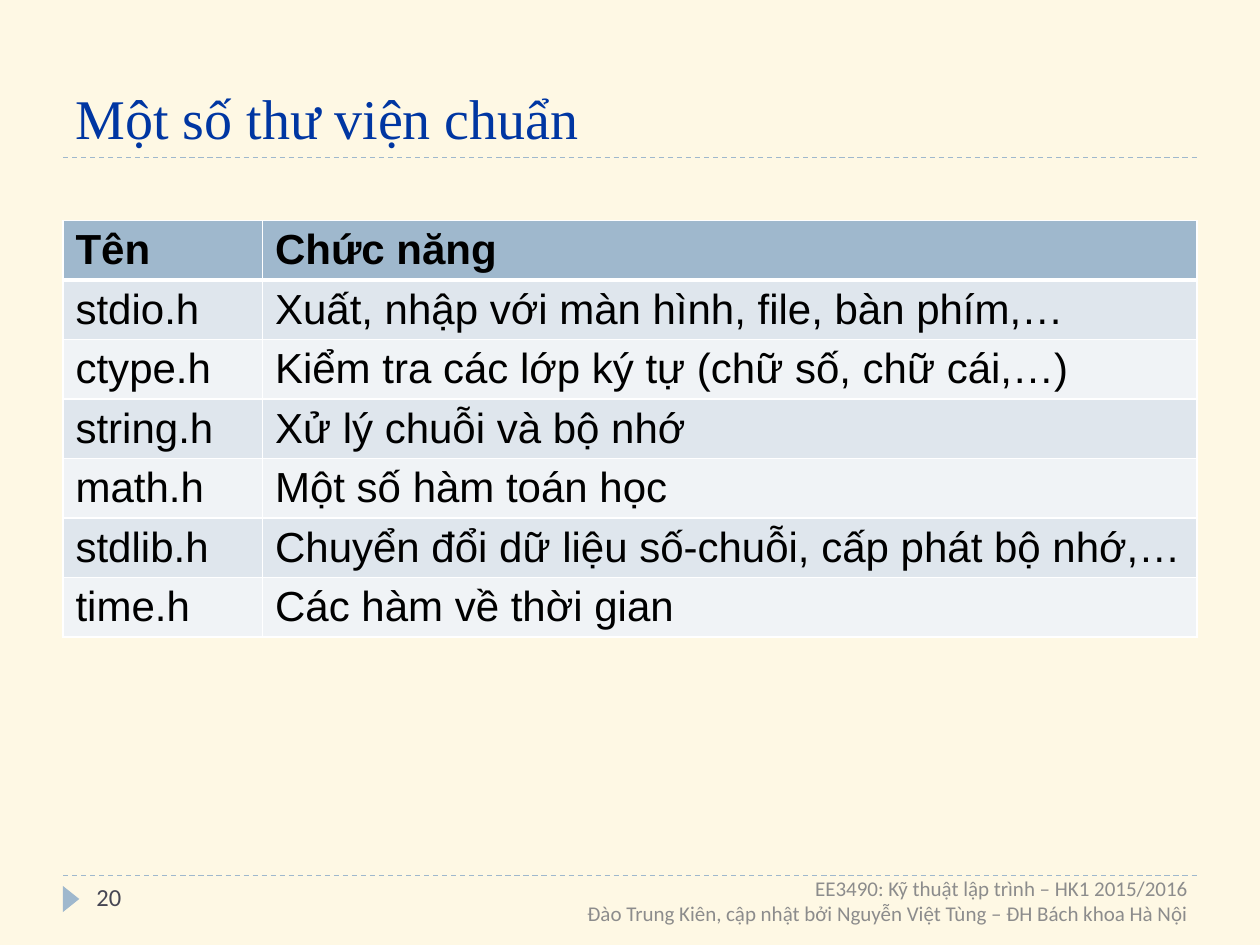
from dataclasses import dataclass

from lxml.etree import SubElement
from pptx import Presentation
from pptx.dml.color import RGBColor
from pptx.enum.dml import MSO_LINE
from pptx.enum.shapes import MSO_CONNECTOR, MSO_SHAPE
from pptx.enum.text import MSO_ANCHOR, PP_ALIGN
from pptx.oxml.ns import qn
from pptx.util import Pt


@dataclass(frozen=True)
class Theme:
    """Colours, fonts and type sizes of the slide."""

    background: str = "FEF8E4"
    accent: str = "9FB8CD"
    band_dark: str = "DFE6ED"
    band_light: str = "F0F3F6"
    border: str = "FFFFFF"
    title: str = "0036A2"
    body: str = "000000"
    number: str = "464653"
    footer: str = "8C8C8C"
    title_font: str = "Times New Roman"
    table_font: str = "Arial"
    footer_font: str = "Calibri"
    title_size: int = 32
    table_size: int = 24
    number_size: int = 14
    footer_size: int = 12


THEME = Theme()
LEFT, WIDTH = 36, 648
HEADER = ("Tên", "Chức năng")
LIBRARIES = (
    ("stdio.h", "Xuất, nhập với màn hình, file, bàn phím,…"),
    ("ctype.h", "Kiểm tra các lớp ký tự (chữ số, chữ cái,…)"),
    ("string.h", "Xử lý chuỗi và bộ nhớ"),
    ("math.h", "Một số hàm toán học"),
    ("stdlib.h", "Chuyển đổi dữ liệu số-chuỗi, cấp phát bộ nhớ,…"),
    ("time.h", "Các hàm về thời gian"),
)
FOOTER = (
    "EE3490: Kỹ thuật lập trình – HK1 2015/2016\n"
    "Đào Trung Kiên, cập nhật bởi Nguyễn Việt Tùng – ĐH Bách khoa Hà Nội"
)


def set_text(tf, text, font, size, color, bold=False, align=PP_ALIGN.LEFT):
    """Fill a text frame and format all its runs alike."""
    tf.text = text
    tf.word_wrap = True
    for p in tf.paragraphs:
        p.alignment = align
        for r in p.runs:
            r.font.name = font
            r.font.size = Pt(size)
            r.font.bold = bold
            r.font.color.rgb = RGBColor.from_string(color)


def add_title(s, text):
    """Place and format the title placeholder."""
    sp = s.shapes.title
    sp.left, sp.top, sp.width, sp.height = Pt(LEFT), Pt(12), Pt(WIDTH), Pt(78)
    set_text(sp.text_frame, text, THEME.title_font, THEME.title_size, THEME.title)
    sp.text_frame.vertical_anchor = MSO_ANCHOR.BOTTOM


def add_rule(s, y):
    """Draw a dashed horizontal rule across the content width."""
    line = s.shapes.add_connector(
        MSO_CONNECTOR.STRAIGHT, Pt(LEFT), Pt(y), Pt(LEFT + WIDTH), Pt(y)
    )
    line.line.color.rgb = RGBColor.from_string(THEME.accent)
    line.line.width = Pt(0.75)
    line.line.dash_style = MSO_LINE.DASH
    SubElement(line._element.spPr, qn("a:effectLst"))


def add_marker(s):
    """Draw the triangle that points at the page number."""
    sp = s.shapes.add_shape(
        MSO_SHAPE.ISOSCELES_TRIANGLE, Pt(33.1), Pt(509), Pt(15), Pt(9.4)
    )
    sp.rotation = 90
    sp.shadow.inherit = False
    sp.fill.solid()
    sp.fill.fore_color.rgb = RGBColor.from_string(THEME.accent)
    sp.line.fill.background()


def add_label(s, x, width, text, size, color, align, anchor):
    """Add a text box in the footer band."""
    tf = s.shapes.add_textbox(Pt(x), Pt(500.4), Pt(width), Pt(28.8)).text_frame
    set_text(tf, text, THEME.footer_font, size, color, align=align)
    tf.vertical_anchor = anchor


def set_borders(cell, widths):
    """Give a cell solid borders, with widths by side."""
    tcPr = cell._tc.get_or_add_tcPr()
    for side, width in widths.items():
        ln = SubElement(tcPr, qn(f"a:ln{side}"), w=str(Pt(width)))
        fill = SubElement(ln, qn("a:solidFill"))
        SubElement(fill, qn("a:srgbClr"), val=THEME.border)


def add_library_table(s, rows, widths, row_height):
    """Add the table with a header row and banded body rows."""
    table = s.shapes.add_table(
        len(rows), len(widths), Pt(LEFT), Pt(126), Pt(WIDTH), Pt(row_height * len(rows))
    ).table
    for column, width in zip(table.columns, widths):
        column.width = Pt(width)
    for i, values in enumerate(rows):
        header = i == 0
        band = THEME.band_dark if i % 2 else THEME.band_light
        borders = {"L": 1, "R": 1, "T": 3 if i == 1 else 1, "B": 3 if header else 1}
        for cell, value in zip(table.rows[i].cells, values):
            set_text(cell.text_frame, value, THEME.table_font, THEME.table_size,
                     THEME.body, bold=header)
            set_borders(cell, borders)
            cell.fill.solid()
            cell.fill.fore_color.rgb = RGBColor.from_string(
                THEME.accent if header else band
            )


def main():
    """Build and save the slide."""
    prs = Presentation()
    prs.slide_width, prs.slide_height = Pt(720), Pt(540)
    s = prs.slides.add_slide(prs.slide_layouts[5])
    s.background.fill.solid()
    s.background.fill.fore_color.rgb = RGBColor.from_string(THEME.background)
    for y in (500.4, 90):
        add_rule(s, y)
    add_marker(s)
    add_title(s, "Một số thư viện chuẩn")
    add_library_table(s, (HEADER, *LIBRARIES), (114, 534), 34)
    add_label(s, 48, 156, "20", THEME.number_size, THEME.number,
              PP_ALIGN.LEFT, MSO_ANCHOR.TOP)
    add_label(s, 246, 440, FOOTER, THEME.footer_size, THEME.footer,
              PP_ALIGN.RIGHT, MSO_ANCHOR.MIDDLE)
    prs.save("out.pptx")


if __name__ == "__main__":
    main()
